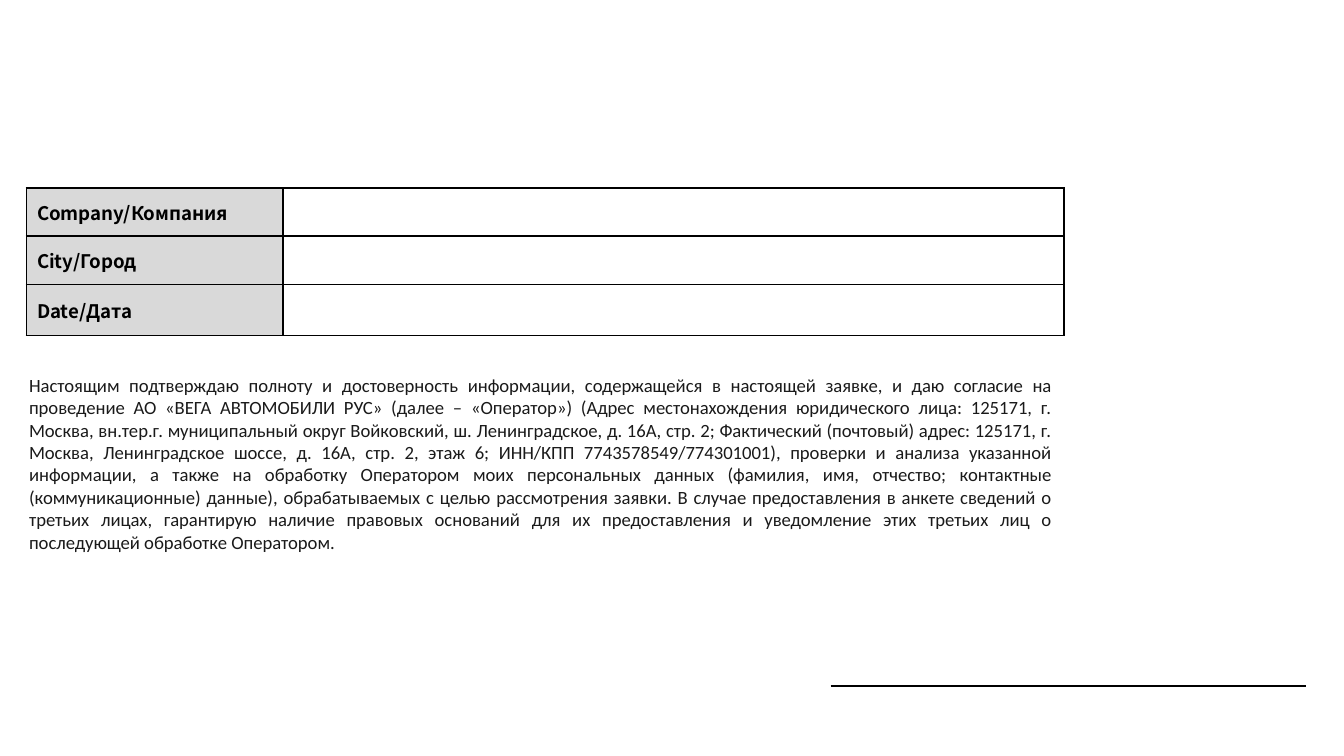
from lxml import etree
from pptx import Presentation
from pptx.dml.color import RGBColor
from pptx.enum.shapes import MSO_CONNECTOR
from pptx.enum.text import MSO_ANCHOR, PP_ALIGN
from pptx.oxml.ns import qn
from pptx.util import Cm, Pt

BLACK = RGBColor(0x00, 0x00, 0x00)
INK = RGBColor(0x1A, 0x1A, 0x1A)
GREY = RGBColor(0xD9, 0xD9, 0xD9)
WHITE = RGBColor(0xFF, 0xFF, 0xFF)
LEFT, JUSTIFY = PP_ALIGN.LEFT, PP_ALIGN.JUSTIFY
MIDDLE = MSO_ANCHOR.MIDDLE
STRAIGHT = MSO_CONNECTOR.STRAIGHT
BLANK_LAYOUT = 6

FIELDS = ["Company/Компания", "City/Город", "Date/Дата"]
CONSENT = [
    "Настоящим подтверждаю полноту и достоверность информации, содержащейся в "
    "настоящей заявке, и даю согласие на проведение АО «ВЕГА АВТОМОБИЛИ РУС» "
    "(далее – «Оператор»)",
    "(Адрес местонахождения юридического лица: 125171, г. "
    "Москва, вн.тер.г. муниципальный округ Войковский, ш. Ленинградское, д. 16А, "
    "стр. 2; Фактический (почтовый) адрес: 125171, г. Москва, Ленинградское "
    "шоссе, д. 16А, стр. 2, этаж 6; ИНН/КПП 7743578549/774301001),",
    "проверки и анализа указанной информации, а также на обработку Оператором "
    "моих персональных данных (фамилия, имя, отчество; контактные "
    "(коммуникационные) данные), обрабатываемых с целью рассмотрения заявки.",
    "В случае предоставления в анкете сведений о третьих лицах, гарантирую "
    "наличие правовых оснований для их предоставления и уведомление этих "
    "третьих лиц о последующей обработке Оператором.",
]


def write(frame, text, font="Calibri", size=10, color=INK, bold=False, align=LEFT):
    paragraph = frame.paragraphs[0]
    paragraph.alignment = align
    run = paragraph.add_run()
    run.text = text
    run.font.name = font
    run.font.size = Pt(size)
    run.font.bold = bold
    run.font.color.rgb = color


class FormSlide:
    label_font = "Noto Sans CJK SC"
    line_width = Pt(1)

    def __init__(self, slide):
        self.slide = slide

    def border(self, cell):
        properties = cell._tc.get_or_add_tcPr()
        for position, side in enumerate(("lnL", "lnR", "lnT", "lnB")):
            edge = etree.Element(qn(f"a:{side}"), w=str(self.line_width))
            fill = etree.SubElement(edge, qn("a:solidFill"))
            etree.SubElement(fill, qn("a:srgbClr"), val=str(BLACK))
            properties.insert(position, edge)

    def form(self, labels, left, top, widths, heights):
        table = self.slide.shapes.add_table(
            len(labels), len(widths), left, top, sum(widths), sum(heights)).table
        for column, width in zip(table.columns, widths):
            column.width = width
        for row, height, label in zip(table.rows, heights, labels):
            row.height = height
            for cell, fill in zip(row.cells, (GREY, WHITE)):
                cell.fill.solid()
                cell.fill.fore_color.rgb = fill
                cell.vertical_anchor = MIDDLE
                cell.margin_left = cell.margin_right = Cm(0.2)
                cell.margin_top = cell.margin_bottom = 0
                self.border(cell)
            write(row.cells[0].text_frame, label, font=self.label_font,
                  color=BLACK, bold=True)

    def text(self, text, left, top, width, height, **style):
        frame = self.slide.shapes.add_textbox(left, top, width, height).text_frame
        frame.word_wrap = True
        write(frame, text, **style)

    def rule(self, left, right, y):
        line = self.slide.shapes.add_connector(STRAIGHT, left, y, right, y)
        line.line.color.rgb = BLACK
        line.line.width = self.line_width
        etree.SubElement(line._element.spPr, qn("a:effectLst"))


def main():
    deck = Presentation()
    deck.slide_width, deck.slide_height = Cm(25.4), Cm(14.28)
    page = FormSlide(deck.slides.add_slide(deck.slide_layouts[BLANK_LAYOUT]))

    # Footer rule
    page.rule(Cm(15.7), Cm(24.69), Cm(12.95))

    # Applicant fields
    page.form(FIELDS, Cm(0.5), Cm(3.55), widths=[Cm(4.85), Cm(14.76)],
              heights=[Cm(0.91), Cm(0.91), Cm(0.97)])

    # Consent statement
    page.text(" ".join(CONSENT), Cm(0.3), Cm(6.93), Cm(19.81), Cm(3.68),
              align=JUSTIFY)

    deck.save("out.pptx")


if __name__ == "__main__":
    main()
